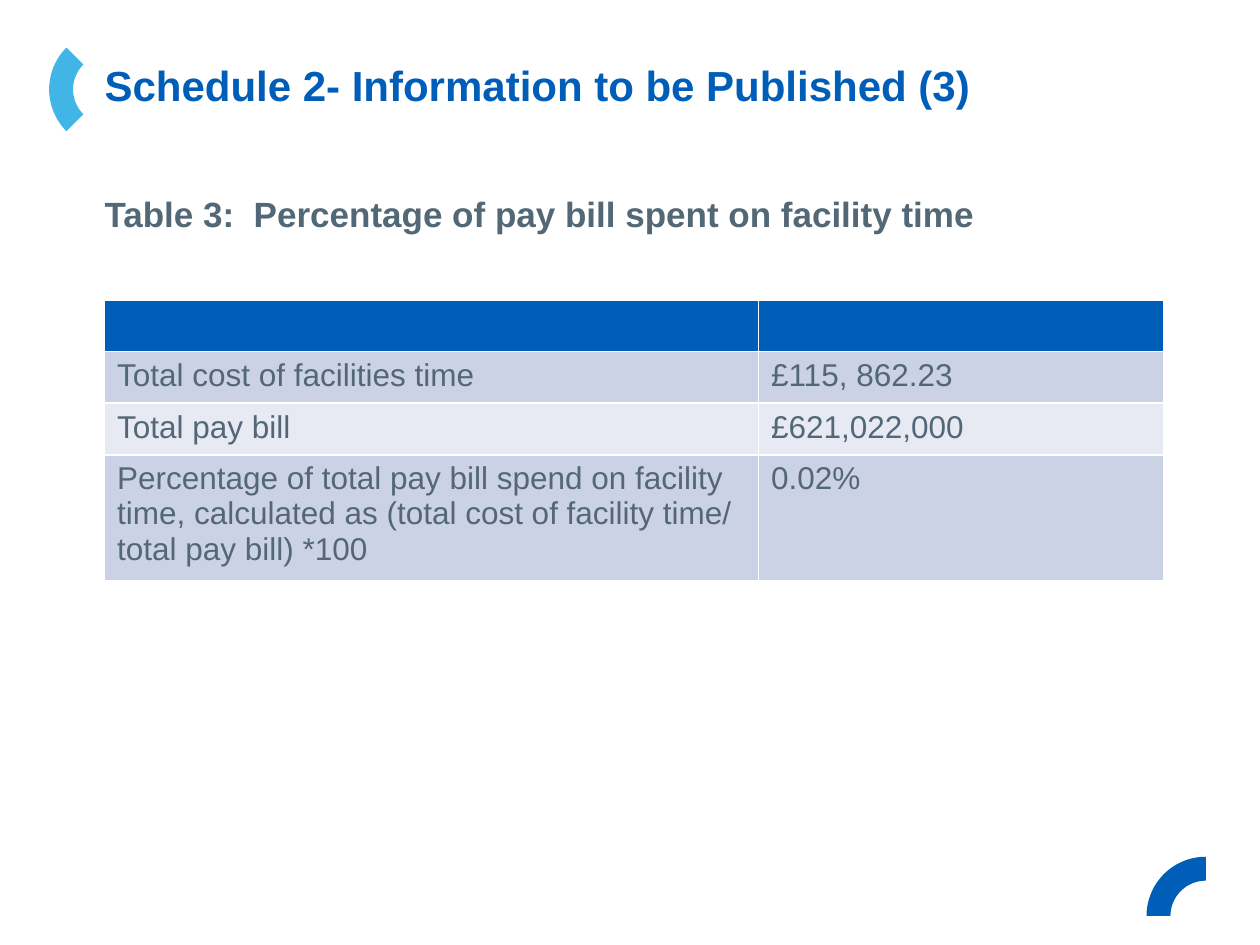
import math
import pptx
import pptx.dml.color
import pptx.enum.text
import pptx.util

Inches = pptx.util.Inches
Pt = pptx.util.Pt

BLUE, SKY, SLATE = "005EB8", "41B6E6", "536876"
BAND_FILLS = ("CCD2E6", "E7EAF3")
TITLE = "Schedule 2- Information to be Published (3)"
CAPTION = "Table 3:  Percentage of pay bill spent on facility time"
ROWS = [
    ("", ""),
    ("Total cost of facilities time", "£115, 862.23"),
    ("Total pay bill", "£621,022,000"),
    ("Percentage of total pay bill spend on facility time, calculated as "
     "(total cost of facility time/ total pay bill) *100", "0.02%"),
]
COL_WIDTHS = (5.19, 3.22)
ROW_HEIGHTS = (0.41, 0.41, 0.41, 0.93)
LEFT, TEXT_WIDTH = 0.83, 8.62
OUTER_RADIUS, INNER_RADIUS, ARC_STEPS = 0.47, 0.28, 30
ARCS = [(9.57, 7.27, 180, BLUE), (0.86, 0.71, 135, SKY)]


def rgb(color):
    return pptx.dml.color.RGBColor.from_string(color)


def style(p, size, color, bold=False):
    p.font.name = "Arial"
    p.font.size = Pt(size)
    p.font.bold = bold
    p.font.color.rgb = rgb(color)


def set_text(sp, text, size, color, spacing):
    tf = sp.text_frame
    tf.margin_left = tf.margin_top = tf.margin_right = tf.margin_bottom = 0
    tf.word_wrap = True
    tf.vertical_anchor = pptx.enum.text.MSO_ANCHOR.TOP
    p = tf.paragraphs[0]
    p.text = text
    p.alignment = pptx.enum.text.PP_ALIGN.LEFT
    p.line_spacing = spacing
    style(p, size, color, bold=True)


def add_arc(s, cx, cy, start, color):
    angles = [math.radians(start + 90 * i / ARC_STEPS) for i in range(ARC_STEPS + 1)]
    edges = [(OUTER_RADIUS, a) for a in angles] + [(INNER_RADIUS, a) for a in reversed(angles)]
    points = [(Inches(cx + r * math.cos(a)), Inches(cy + r * math.sin(a))) for r, a in edges]
    builder = s.shapes.build_freeform(*points[0])
    builder.add_line_segments(points[1:], close=True)
    sp = builder.convert_to_shape()
    sp.shadow.inherit = False
    sp.fill.solid()
    sp.fill.fore_color.rgb = rgb(color)
    sp.line.fill.background()


def add_pay_table(s):
    table = s.shapes.add_table(
        len(ROWS), len(COL_WIDTHS), Inches(LEFT), Inches(2.38),
        Inches(sum(COL_WIDTHS)), Inches(sum(ROW_HEIGHTS))).table
    for col, width in zip(table.columns, COL_WIDTHS):
        col.width = Inches(width)
    for i, (row, height) in enumerate(zip(ROWS, ROW_HEIGHTS)):
        table.rows[i].height = Inches(height)
        for j, text in enumerate(row):
            cell = table.cell(i, j)
            cell.fill.solid()
            cell.fill.fore_color.rgb = rgb(BAND_FILLS[(i - 1) % 2] if i else BLUE)
            p = cell.text_frame.paragraphs[0]
            p.text = text
            style(p, 18, SLATE)


prs = pptx.Presentation()
prs.slide_width, prs.slide_height = Inches(10), Inches(7.5)
s = prs.slides.add_slide(prs.slide_layouts[5])
for arc in ARCS:
    add_arc(s, *arc)

title = s.shapes.title
title.left, title.top = Inches(LEFT), Inches(0.52)
title.width, title.height = Inches(TEXT_WIDTH), Inches(0.45)
set_text(title, TITLE, 24, BLUE, 0.9)

caption = s.shapes.add_textbox(Inches(LEFT), Inches(1.62), Inches(TEXT_WIDTH), Inches(0.6))
set_text(caption, CAPTION, 20, SLATE, 0.7)
add_pay_table(s)
prs.save("out.pptx")
